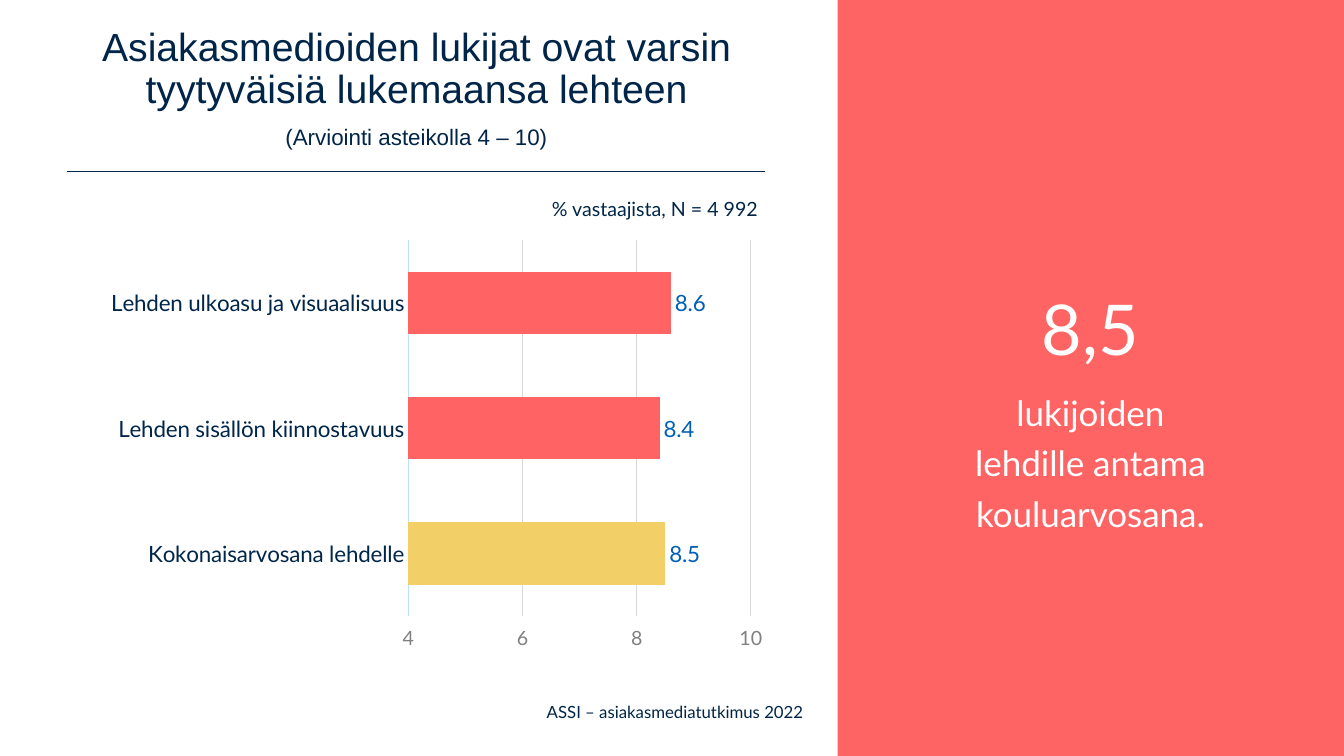
from dataclasses import dataclass

from lxml.etree import SubElement
from pptx import Presentation
from pptx.chart.data import CategoryChartData as Data
from pptx.dml.color import RGBColor as Rgb
from pptx.enum.chart import XL_AXIS_CROSSES as Cross
from pptx.enum.chart import XL_CHART_TYPE as Kind
from pptx.enum.chart import XL_LABEL_POSITION as Spot
from pptx.enum.chart import XL_TICK_LABEL_POSITION as Place
from pptx.enum.chart import XL_TICK_MARK as Tick
from pptx.enum.shapes import MSO_CONNECTOR as Link
from pptx.enum.shapes import MSO_SHAPE as Form
from pptx.enum.text import MSO_ANCHOR as Anchor
from pptx.enum.text import MSO_AUTO_SIZE as Fit
from pptx.enum.text import PP_ALIGN as Align
from pptx.oxml import parse_xml
from pptx.oxml.ns import nsdecls, qn
from pptx.util import Cm, Pt

HEX = {
    "navy": "002548",
    "ink": "002649",
    "coral": "FF6464",
    "bar": "FF6363",
    "gold": "F3CF67",
    "blue": "005FB6",
    "sky": "BDE0FF",
    "gray": "808080",
    "grid": "D9D9D9",
    "white": "FFFFFF",
}


@dataclass
class Row:
    text: str
    size: float
    gap: float = 0


@dataclass
class Bar:
    name: str
    value: float
    color: str


BARS = [
    Bar("Lehden ulkoasu ja visuaalisuus", 8.6, "bar"),
    Bar("Lehden sisällön kiinnostavuus", 8.4, "bar"),
    Bar("Kokonaisarvosana lehdelle", 8.5, "gold"),
]


def tint(name: str) -> Rgb:
    return Rgb.from_string(HEX[name])


def style(font, size: float, color: str, face: str = "Lato") -> None:
    font.size = Pt(size)
    font.name = face
    font.color.rgb = tint(color)


def move(shape, left: float, top: float, width: float, height: float) -> None:
    shape.left, shape.top = Cm(left), Cm(top)
    shape.width, shape.height = Cm(width), Cm(height)


def write(shape, rows: list[Row], *, color: str, face: str = "Lato",
          align=Align.CENTER, anchor=Anchor.MIDDLE, lead: float = 1.0) -> None:
    frame = shape.text_frame
    frame.word_wrap = True
    frame.auto_size = Fit.NONE
    frame.vertical_anchor = anchor
    for num, row in enumerate(rows):
        para = frame.add_paragraph() if num else frame.paragraphs[0]
        para.text = row.text
        props = para._p.get_or_add_pPr()
        props.set("marL", "0")
        props.set("indent", "0")
        SubElement(props, qn("a:buNone"))
        para.alignment = align
        para.line_spacing = lead
        para.space_before = Pt(row.gap)
        for run in para.runs:
            style(run.font, row.size, color, face)


def stroke(line, color: str, width: float = 0.75) -> None:
    line.color.rgb = tint(color)
    line.width = Pt(width)


def draw_chart(slide) -> None:
    data = Data()
    data.categories = [bar.name for bar in BARS]
    data.add_series("Series 1", [bar.value for bar in BARS])
    chart = slide.shapes.add_chart(
        Kind.BAR_CLUSTERED, Cm(0), Cm(5.26), Cm(20.07), Cm(12.29), data).chart
    chart.has_legend = False
    chart.has_title = False
    style(chart.font, 10, "ink", "Calibri")

    cat = chart.category_axis
    cat.reverse_order = True
    cat.tick_label_position = Place.NEXT_TO_AXIS
    style(cat.tick_labels.font, 16, "ink")
    stroke(cat.format.line, "sky")

    val = chart.value_axis
    val.minimum_scale, val.maximum_scale, val.major_unit = 4, 10, 2
    val.crosses = Cross.MINIMUM
    val.tick_label_position = Place.HIGH
    val.tick_labels.number_format = "General"
    val.tick_labels.number_format_is_linked = False
    style(val.tick_labels.font, 14, "gray")
    val.format.line.fill.background()
    stroke(val.major_gridlines.format.line, "grid")
    for axis in (cat, val):
        axis.major_tick_mark = axis.minor_tick_mark = Tick.NONE

    plot = chart.plots[0]
    plot.gap_width = 100
    plot.vary_by_categories = False
    series = plot.series[0]
    series.format.fill.solid()
    series.format.fill.fore_color.rgb = tint("bar")
    for num, bar in enumerate(BARS):
        fill = series.points[num].format.fill
        fill.solid()
        fill.fore_color.rgb = tint(bar.color)

    labels = series.data_labels
    labels.show_value = True
    labels.position = Spot.OUTSIDE_END
    labels.number_format = "#,##0.0"
    labels.number_format_is_linked = False
    style(labels.font, 16, "blue")

    area = chart._chartSpace.chart.plotArea
    for old in area.findall(qn("c:layout")):
        area.remove(old)
    sides = {"x": 0.513, "y": 0.065, "w": 0.43, "h": 0.77}
    modes = '<c:xMode val="edge"/><c:yMode val="edge"/>'
    sizes = "".join(f'<c:{key} val="{num}"/>' for key, num in sides.items())
    area.insert(0, parse_xml(
        f'<c:layout {nsdecls("c")}><c:manualLayout>'
        f'<c:layoutTarget val="inner"/>{modes}{sizes}'
        "</c:manualLayout></c:layout>"))


def main() -> None:
    deck = Presentation()
    deck.slide_width, deck.slide_height = Cm(33.87), Cm(19.05)
    slide = deck.slides.add_slide(deck.slide_layouts[1])
    shapes = slide.shapes

    foot = shapes.add_textbox(Cm(0.08), Cm(17.75), Cm(33.87), Cm(0.46))
    write(foot, [Row("ASSI – asiakasmediatutkimus 2022", 12)],
          color="navy", lead=0.9)

    panel = shapes.add_shape(
        Form.RECTANGLE, Cm(21.11), Cm(0), Cm(12.76), Cm(19.05))
    panel.shadow.inherit = False
    panel.fill.solid()
    panel.fill.fore_color.rgb = tint("coral")
    panel.line.fill.background()

    rule = shapes.add_connector(
        Link.STRAIGHT, Cm(1.68), Cm(4.32), Cm(19.28), Cm(4.32))
    stroke(rule.line, "ink", 1)
    SubElement(rule._element.spPr, qn("a:effectLst"))

    title = shapes.title
    move(title, 1.68, 0.15, 17.63, 4.17)
    write(title, [
        Row("Asiakasmedioiden lukijat ovat varsin tyytyväisiä lukemaansa lehteen", 28),
        Row("(Arviointi asteikolla 4 – 10)", 16, 10),
    ], color="navy", face="Arial", lead=0.9)

    body = slide.placeholders[1]
    move(body, 22.4, 4.32, 10.16, 11.58)
    write(body, [
        Row("8,5", 50),
        Row("lukijoiden\vlehdille antama kouluarvosana.", 25, 10),
    ], color="white", lead=1.2)
    shapes._spTree.append(title._element)
    shapes._spTree.append(body._element)

    note = shapes.add_textbox(Cm(8.74), Cm(4.83), Cm(10.62), Cm(0.86))
    write(note, [Row("% vastaajista, N = 4 992", 14)],
          color="ink", align=Align.RIGHT, anchor=Anchor.TOP)

    draw_chart(slide)
    deck.save("out.pptx")


if __name__ == "__main__":
    main()
